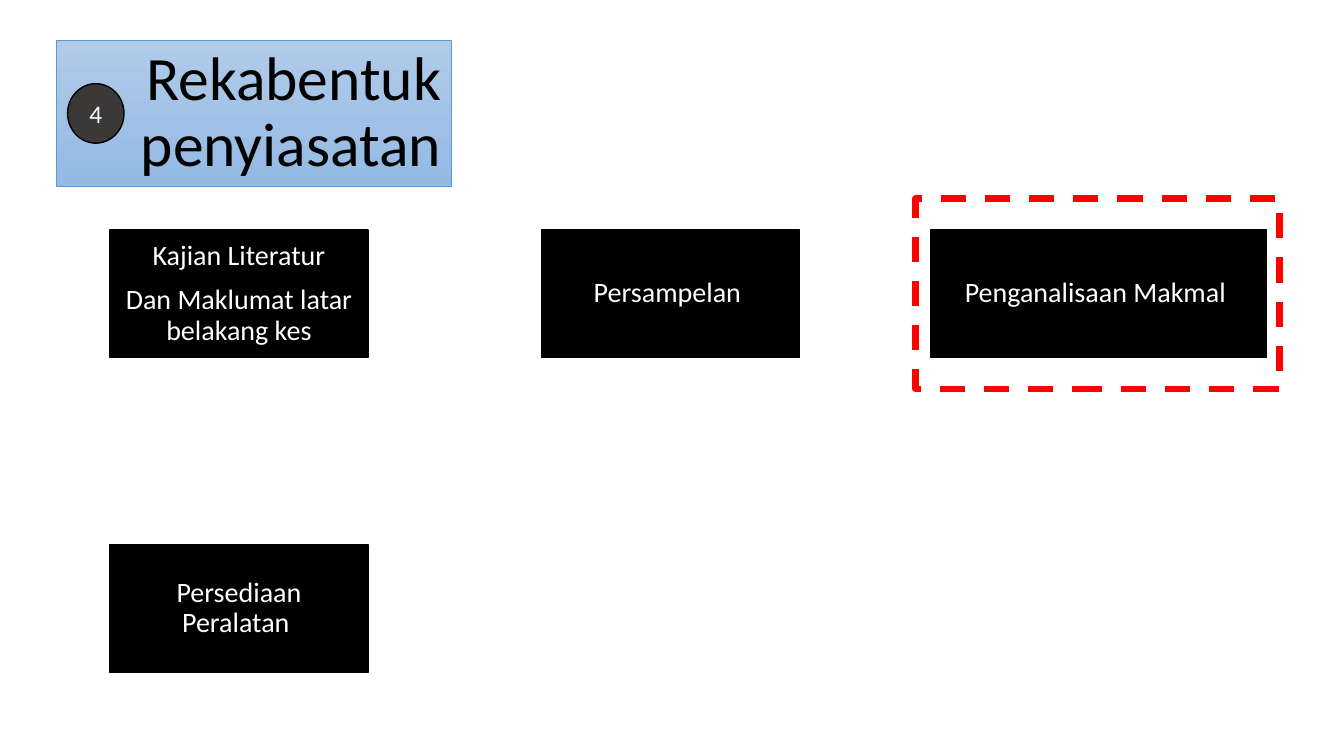
from dataclasses import dataclass

from pptx import Presentation
from pptx.dml.color import RGBColor
from pptx.enum.dml import MSO_LINE as Dash
from pptx.enum.shapes import MSO_SHAPE as Kind
from pptx.enum.text import MSO_ANCHOR as Anchor, MSO_AUTO_SIZE as Fit, PP_ALIGN as Align
from pptx.util import Inches, Pt

WIDE, HIGH = Inches(13.33), Inches(7.5)


# Places are percentages of the slide's width and height
@dataclass(frozen=True)
class Area:
    left: float
    top: float
    width: float
    height: float

    def emu(self) -> tuple[int, int, int, int]:
        return (round(self.left * WIDE / 100), round(self.top * HIGH / 100),
                round(self.width * WIDE / 100), round(self.height * HIGH / 100))


@dataclass(frozen=True)
class Step:
    text: str
    left: float
    top: float
    width: float = 19.2
    height: float = 16.93


ROWS = (30.4, 72)
COLS = (8.18, 40.29, 69.24)
STEPS = (
    Step("Kajian Literatur\nDan Maklumat latar belakang kes", COLS[0], ROWS[0]),
    Step("Persampelan ", COLS[1], ROWS[0]),
    Step("Penganalisaan Makmal ", COLS[2], ROWS[0], width=25),
    Step("Persediaan Peralatan ", COLS[0], ROWS[1]),
)


def color(code: str) -> RGBColor:
    return RGBColor.from_string(code)


def write(shape, text: str, *, size: float, ink: str = "FFFFFF",
          align=Align.CENTER, lead: float = 0.9, gap: float = 0) -> None:
    frame = shape.text_frame
    frame.text = text
    frame.word_wrap = True
    frame.auto_size = Fit.NONE
    frame.vertical_anchor = Anchor.MIDDLE
    for n, par in enumerate(frame.paragraphs):
        par.alignment = align
        par.line_spacing = lead
        par.space_before = Pt(gap if n else 0)
        par.font.name = "Calibri"
        par.font.size = Pt(size)
        par.font.color.rgb = color(ink)


def edge(shape, code: str, width: float) -> None:
    shape.line.color.rgb = color(code)
    shape.line.width = Pt(width)


def draw(slide, kind, area: Area, *, fill: str = "", line: str = "000000",
         width: float = 1):
    shape = slide.shapes.add_shape(kind, *area.emu())
    shape.shadow.inherit = False
    if fill:
        shape.fill.solid()
        shape.fill.fore_color.rgb = color(fill)
    else:
        shape.fill.background()
    edge(shape, line, width)
    return shape


def head(slide) -> None:
    title = slide.shapes.title
    area = Area(4.2, 5.33, 29.41, 19.33)
    title.left, title.top, title.width, title.height = area.emu()
    title.fill.gradient()
    title.fill.gradient_angle = 270
    for stop, place, code in zip(title.fill.gradient_stops, (0, 1), ("B1CBE9", "93B9E4")):
        stop.position = place
        stop.color.rgb = color(code)
    edge(title, "5B9BD5", 0.5)
    write(title, "Rekabentuk penyiasatan", size=44, ink="000000", align=Align.RIGHT)


def main() -> None:
    deck = Presentation()
    deck.slide_width, deck.slide_height = WIDE, HIGH
    slide = deck.slides.add_slide(deck.slide_layouts.get_by_name("Title Only"))

    # Title panel
    head(slide)

    # Steps of the investigation
    for step in STEPS:
        area = Area(step.left, step.top, step.width, step.height)
        box = draw(slide, Kind.RECTANGLE, area, fill="000000")
        write(box, step.text, size=20, gap=10)

    # Section number
    badge = draw(slide, Kind.OVAL, Area(5.03, 11.07, 4.2, 7.87), fill="3B3838")
    write(badge, "4", size=18, lead=1)

    # Dashed frame around the current step
    frame = draw(slide, Kind.RECTANGLE, Area(68.12, 26.27, 27.08, 25.2),
                 line="FF0000", width=4.5)
    frame.line.dash_style = Dash.DASH

    deck.save("out.pptx")


if __name__ == "__main__":
    main()
